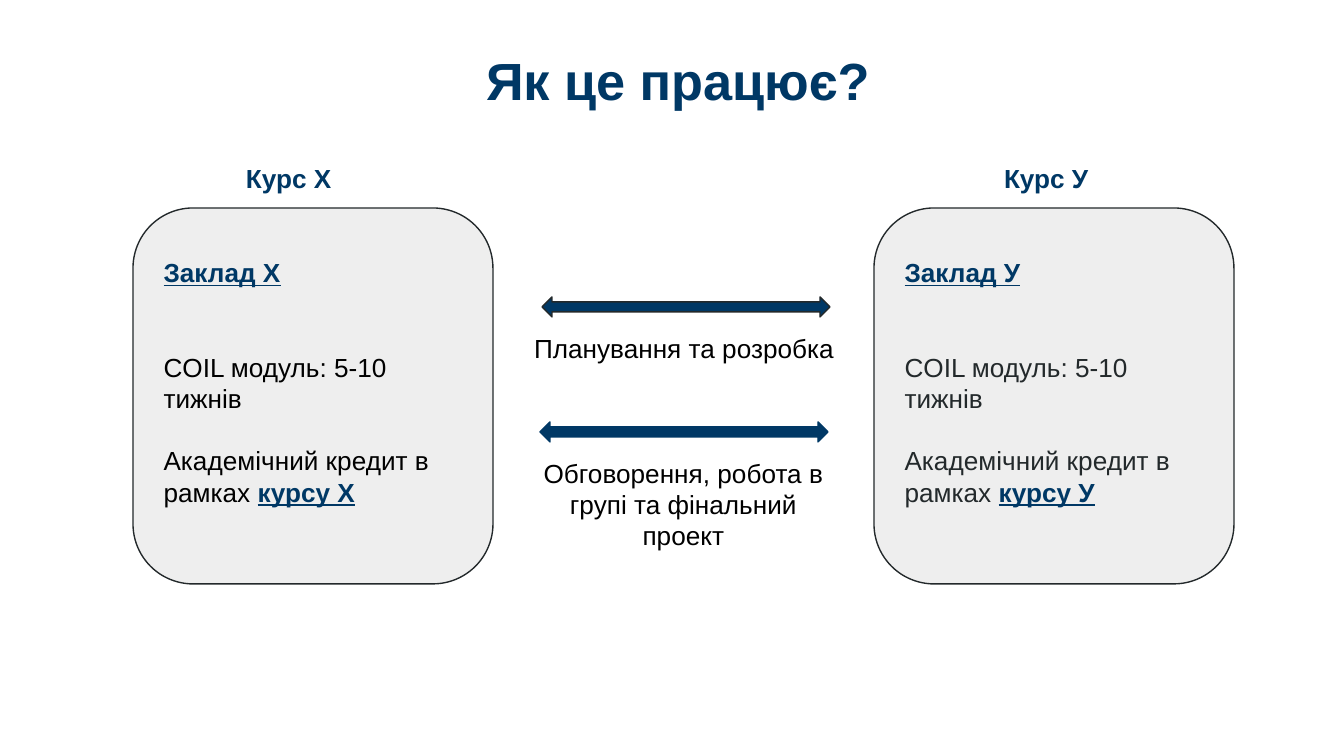
from pptx import Presentation
from pptx.dml.color import RGBColor
from pptx.enum.shapes import MSO_SHAPE
from pptx.enum.text import MSO_ANCHOR, PP_ALIGN
from pptx.util import Pt

PX = 914400 / 134.4
NAVY, DARK, BLACK, GREY = "003865", "23292B", "000000", "EEEEEE"
INSET = 13

# Content
TITLE = "Як це працює?"
MODULE = "COIL модуль: 5-10 тижнів"
CREDIT = "Академічний кредит в рамках "
# course, school, linked course, body colour, card left, label left
COURSES = [
    ("Курс Х", "Заклад Х", "курсу Х", BLACK, 133, 233),
    ("Курс У", "Заклад У", "курсу У", DARK, 874, 991),
]
# text, text box, alignment, arrow left and top, arrow outline
EXCHANGES = [
    ("Планування та розробка", (521, 319, 433, 59), PP_ALIGN.LEFT,
     (542, 297), DARK),
    ("Обговорення, робота в групі та фінальний проект", (521, 444, 325, 122),
     PP_ALIGN.CENTER, (540, 422), NAVY),
]


def px(value):
    return round(value * PX)


def color(value):
    return RGBColor.from_string(value)


def place(*box):
    return [px(value) for value in box]


def set_frame(frame, horizontal=INSET, vertical=INSET):
    frame.word_wrap = True
    frame.vertical_anchor = MSO_ANCHOR.TOP
    frame.margin_left = frame.margin_right = px(horizontal)
    frame.margin_top = frame.margin_bottom = px(vertical)


def format_run(run, fill, size=14, bold=False, underline=False):
    font = run.font
    font.name, font.size = "Arial", Pt(size)
    font.bold, font.underline = bold, underline
    font.color.rgb = color(fill)


def add_shape(kind, box, fill, line):
    shape = slide.shapes.add_shape(kind, *place(*box))
    shape.shadow.inherit = False
    shape.fill.solid()
    shape.fill.fore_color.rgb = color(fill)
    shape.line.color.rgb = color(line)
    shape.line.width = Pt(0.75)
    return shape


def add_label(text, box, fill, bold=False, align=PP_ALIGN.LEFT):
    frame = slide.shapes.add_textbox(*place(*box)).text_frame
    set_frame(frame)
    frame.text = text
    paragraph = frame.paragraphs[0]
    paragraph.alignment = align
    format_run(paragraph.runs[0], fill, bold=bold)


presentation = Presentation()
presentation.slide_width, presentation.slide_height = place(1344, 756)
slide = presentation.slides.add_slide(presentation.slide_layouts[5])

# Title
title = slide.shapes.title
title.left, title.top, title.width, title.height = place(477, 43, 464, 74)
set_frame(title.text_frame, 9, 5)
title.text_frame.text = TITLE
title.text_frame.paragraphs[0].alignment = PP_ALIGN.LEFT
format_run(title.text_frame.paragraphs[0].runs[0], NAVY, 28, bold=True)

# Course cards with their headings
for course, school, link, body, card_left, label_left in COURSES:
    card = add_shape(MSO_SHAPE.ROUNDED_RECTANGLE, (card_left, 208, 360, 376),
                     GREY, DARK)
    card.adjustments[0] = 0.167
    frame = card.text_frame
    set_frame(frame, vertical=31)
    # text, space before in px
    for index, (text, gap) in enumerate([(school, 0), (MODULE, 63), (CREDIT, 31)]):
        paragraph = frame.paragraphs[0] if index == 0 else frame.add_paragraph()
        paragraph.text = text
        paragraph.alignment = PP_ALIGN.LEFT
        if gap:
            paragraph.space_before = px(gap)
        heading = index == 0
        format_run(paragraph.runs[0], NAVY if heading else body,
                   bold=heading, underline=heading)
    run = paragraph.add_run()
    run.text = link
    format_run(run, NAVY, bold=True, underline=True)
    add_label(course, (label_left, 149, 233, 59), NAVY, bold=True)

# Arrows between the courses with their captions
for text, box, align, (left, top), outline in EXCHANGES:
    add_shape(MSO_SHAPE.LEFT_RIGHT_ARROW, (left, top, 288, 20), NAVY, outline)
    add_label(text, box, BLACK, align=align)

presentation.save("out.pptx")
